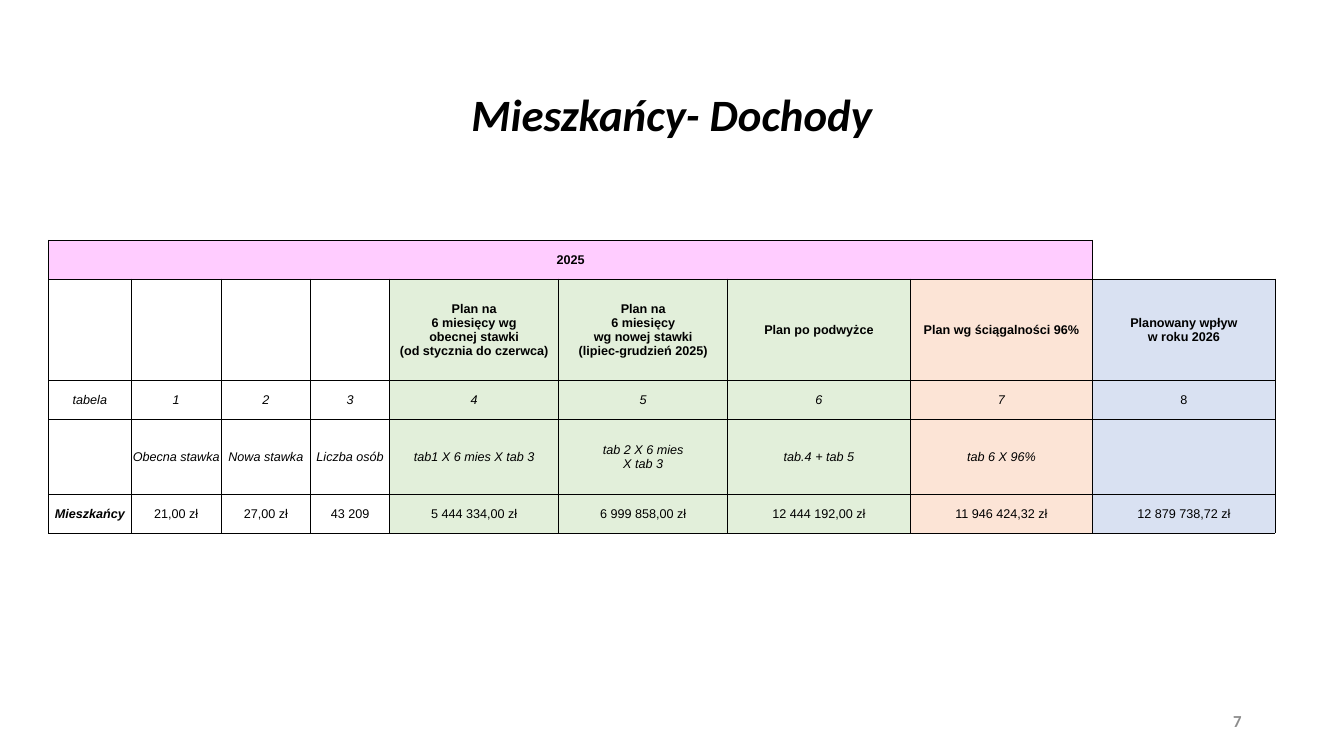
from lxml import etree
from pptx import Presentation
from pptx.dml.color import RGBColor
from pptx.enum.text import MSO_ANCHOR, PP_ALIGN
from pptx.oxml.ns import qn
from pptx.util import Cm, Pt

MIDDLE = MSO_ANCHOR.MIDDLE
CENTER, RIGHT = PP_ALIGN.CENTER, PP_ALIGN.RIGHT

BLACK, GREY = "000000", "8C8C8C"
PINK, GREEN, ORANGE, BLUE = "FFCCFF", "E2EFDA", "FCE4D6", "D9E1F2"

COL_WIDTHS = [2.09, 2.26, 2.26, 1.99, 4.26, 4.26, 4.6, 4.6, 4.6]
ROW_HEIGHTS = [0.98, 2.55, 0.98, 1.89, 0.98]
COL_FILLS = [None] * 4 + [GREEN] * 3 + [ORANGE, BLUE]
YEAR_SPAN = 8

ROWS = [
    ["2025"] + [""] * 8,
    ["", "", "", "",
     "Plan na\n6 miesięcy wg\nobecnej stawki\n(od stycznia do czerwca)",
     "Plan na\n6 miesięcy\nwg nowej stawki\n(lipiec-grudzień 2025)",
     "Plan po podwyżce", "Plan wg ściągalności 96%",
     "Planowany wpływ\nw roku 2026"],
    ["tabela", "1", "2", "3", "4", "5", "6", "7", "8"],
    ["", "Obecna stawka", "Nowa stawka", "Liczba osób", "tab1 X 6 mies X tab 3",
     "tab 2 X 6 mies\nX tab 3", "tab.4 + tab 5", "tab 6 X 96%", ""],
    ["Mieszkańcy", "21,00 zł", "27,00 zł", "43 209", "5 444 334,00 zł",
     "6 999 858,00 zł", "12 444 192,00 zł", "11 946 424,32 zł",
     "12 879 738,72 zł"],
]
# (bold, italic) for each row, then the cells that differ
ROW_STYLES = [(True, False), (True, False), (False, True), (False, True),
              (False, False)]
CELL_STYLES = {(2, 8): (False, False), (4, 0): (True, True)}


def rgb(color):
    return RGBColor.from_string(color)


def write(p, text, align, font, size, color=BLACK, bold=False, italic=False):
    """Add text to a paragraph, one run for each line."""
    p.alignment = align
    for i, line in enumerate(text.split("\n")):
        if i:
            p.add_line_break()
        r = p.add_run()
        r.text = line
        r.font.name = font
        r.font.size = Pt(size)
        r.font.bold = bold
        r.font.italic = italic
        r.font.color.rgb = rgb(color)


def add_text(slide, left, top, width, height, text, align, size, **style):
    sp = slide.shapes.add_textbox(Cm(left), Cm(top), Cm(width), Cm(height))
    tf = sp.text_frame
    tf.word_wrap = True
    tf.vertical_anchor = MIDDLE
    write(tf.paragraphs[0], text, align, "Calibri", size, **style)


def set_borders(cell, sides):
    """Draw thin black lines on the given sides and none on the others."""
    tcPr = cell._tc.get_or_add_tcPr()
    for side in "LRTB":
        ln = etree.SubElement(tcPr, qn(f"a:ln{side}"), w=str(Pt(0.5)))
        if side in sides:
            fill = etree.SubElement(ln, qn("a:solidFill"))
            etree.SubElement(fill, qn("a:srgbClr"), val=BLACK)
        else:
            etree.SubElement(ln, qn("a:noFill"))


def format_cell(cell, text, fill, style, sides):
    set_borders(cell, sides)
    if fill:
        cell.fill.solid()
        cell.fill.fore_color.rgb = rgb(fill)
    else:
        cell.fill.background()
    cell.vertical_anchor = MIDDLE
    cell.margin_left = cell.margin_right = cell.margin_top = Cm(0.02)
    cell.margin_bottom = 0
    if text:
        bold, italic = style
        write(cell.text_frame.paragraphs[0], text, CENTER, "Arial", 9,
              bold=bold, italic=italic)


def add_income_table(slide, left, top):
    table = slide.shapes.add_table(
        len(ROWS), len(COL_WIDTHS), Cm(left), Cm(top),
        Cm(sum(COL_WIDTHS)), Cm(sum(ROW_HEIGHTS))).table
    table.first_row = table.horz_banding = False
    for col, width in zip(table.columns, COL_WIDTHS):
        col.width = Cm(width)
    for row, height in zip(table.rows, ROW_HEIGHTS):
        row.height = Cm(height)
    for i, texts in enumerate(ROWS):
        for j, text in enumerate(texts):
            corner = i == 0 and j == YEAR_SPAN
            fill = COL_FILLS[j] if i else None if corner else PINK
            style = CELL_STYLES.get((i, j), ROW_STYLES[i])
            format_cell(table.cell(i, j), text, fill, style,
                        "LB" if corner else "LRTB")
    table.cell(0, 0).merge(table.cell(0, YEAR_SPAN - 1))


def main():
    prs = Presentation()
    prs.slide_width, prs.slide_height = Cm(33.87), Cm(19.05)
    slide = prs.slides.add_slide(prs.slide_layouts[6])
    add_text(slide, 2.33, 1.01, 29.21, 3.68, "Mieszkańcy- Dochody", CENTER, 32,
             bold=True, italic=True)
    add_income_table(slide, 1.22, 6.05)
    add_text(slide, 23.92, 17.66, 7.62, 1.01, "7", RIGHT, 12, color=GREY,
             bold=True)
    prs.save("out.pptx")


if __name__ == "__main__":
    main()
